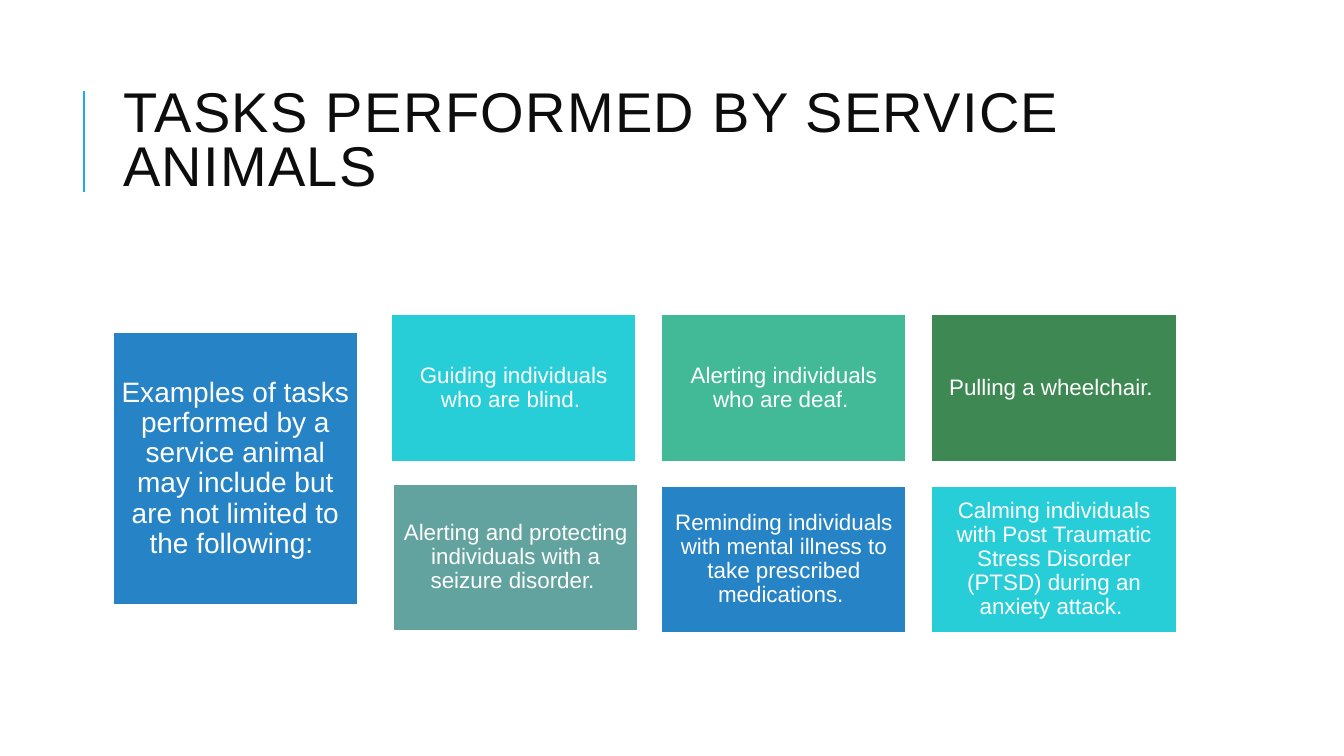
from lxml import etree
from pptx import Presentation
from pptx.dml.color import RGBColor
from pptx.enum.shapes import MSO_CONNECTOR, MSO_SHAPE
from pptx.enum.text import MSO_ANCHOR, MSO_AUTO_SIZE, PP_ALIGN
from pptx.oxml.ns import qn
from pptx.util import Inches, Pt

STRAIGHT = MSO_CONNECTOR.STRAIGHT
RECTANGLE = MSO_SHAPE.RECTANGLE
MIDDLE = MSO_ANCHOR.MIDDLE
NO_AUTOFIT = MSO_AUTO_SIZE.NONE
LEFT, CENTER = PP_ALIGN.LEFT, PP_ALIGN.CENTER

TITLE = "TASKS PERFORMED BY SERVICE ANIMALS"
INTRO = ("Examples of tasks performed by a service animal may include "
         "but are not limited to the following: ")
TASKS = [
    ("Guiding individuals who are blind. ", "27CED7"),
    ("Alerting individuals who are deaf. ", "42BA97"),
    ("Pulling a wheelchair. ", "3E8853"),
    ("Alerting and protecting individuals with a seizure disorder. ", "62A39F"),
    ("Reminding individuals with mental illness to take prescribed medications. ", "2683C6"),
    ("Calming individuals with Post Traumatic Stress Disorder (PTSD) "
     "during an anxiety attack. ", "27CED7"),
]
COLUMNS = 3
CARD_WIDTH, CARD_HEIGHT = 2.43, 1.46
GRID_LEFT, GRID_TOP = 3.88, 3.12
COLUMN_STEP, ROW_STEP = 2.68, 1.7
NUDGED_TASK = 3  # this card sits slightly off the grid
NUDGE = 0.02


def rgb(value):
    return RGBColor.from_string(value)


class TaskSlide:
    font = "Arial"
    white = "FFFFFF"
    ink = "0D0D0D"
    accent = "1CADE4"

    def __init__(self, presentation):
        self.slide = presentation.slides.add_slide(presentation.slide_layouts[5])

    def set_text(self, shape, text, size, color, align, spacing, inset):
        frame = shape.text_frame
        frame.word_wrap = True
        frame.auto_size = NO_AUTOFIT
        frame.vertical_anchor = MIDDLE
        frame.margin_left = frame.margin_right = Inches(inset)
        frame.margin_top = frame.margin_bottom = Inches(min(inset, 0.08))
        paragraph = frame.paragraphs[0]
        paragraph.text = text
        paragraph.alignment = align
        paragraph.line_spacing = spacing
        paragraph.font.name = self.font
        paragraph.font.size = Pt(size)
        paragraph.font.color.rgb = rgb(color)
        return paragraph

    def title(self, text, left, top, width, height):
        heading = self.slide.shapes.title
        heading.left, heading.top = Inches(left), Inches(top)
        heading.width, heading.height = Inches(width), Inches(height)
        paragraph = self.set_text(heading, text, 40, self.ink, LEFT, 0.8, 0.1)
        paragraph.runs[0].font._element.set("spc", "100")

    def rule(self, x, top, bottom):
        rule = self.slide.shapes.add_connector(
            STRAIGHT, Inches(x), Inches(top), Inches(x), Inches(bottom))
        rule.line.color.rgb = rgb(self.accent)
        rule.line.width = Pt(1.5)
        etree.SubElement(rule._element.spPr, qn("a:effectLst"))

    def card(self, text, fill, left, top, height=CARD_HEIGHT, size=16, inset=0.07):
        card = self.slide.shapes.add_shape(
            RECTANGLE, Inches(left), Inches(top), Inches(CARD_WIDTH), Inches(height))
        card.shadow.inherit = False
        card.fill.solid()
        card.fill.fore_color.rgb = rgb(fill)
        card.line.color.rgb = rgb(self.white)
        card.line.width = Pt(1.25)
        self.set_text(card, text, size, self.white, CENTER, 0.9, inset)


def main():
    presentation = Presentation()
    presentation.slide_width = Inches(13.33)
    presentation.slide_height = Inches(7.5)
    page = TaskSlide(presentation)
    page.rule(0.83, 0.9, 1.9)
    page.title(TITLE, 1.12, 0.6, 10.63, 1.64)
    page.card(INTRO, "2683C6", 1.12, 3.3, height=2.7, size=20, inset=0.08)
    for index, (task, fill) in enumerate(TASKS):
        row, column = divmod(index, COLUMNS)
        nudge = NUDGE if index == NUDGED_TASK else 0
        page.card(task, fill, GRID_LEFT + column * COLUMN_STEP + nudge,
                  GRID_TOP + row * ROW_STEP - nudge)
    presentation.save("out.pptx")


if __name__ == "__main__":
    main()
